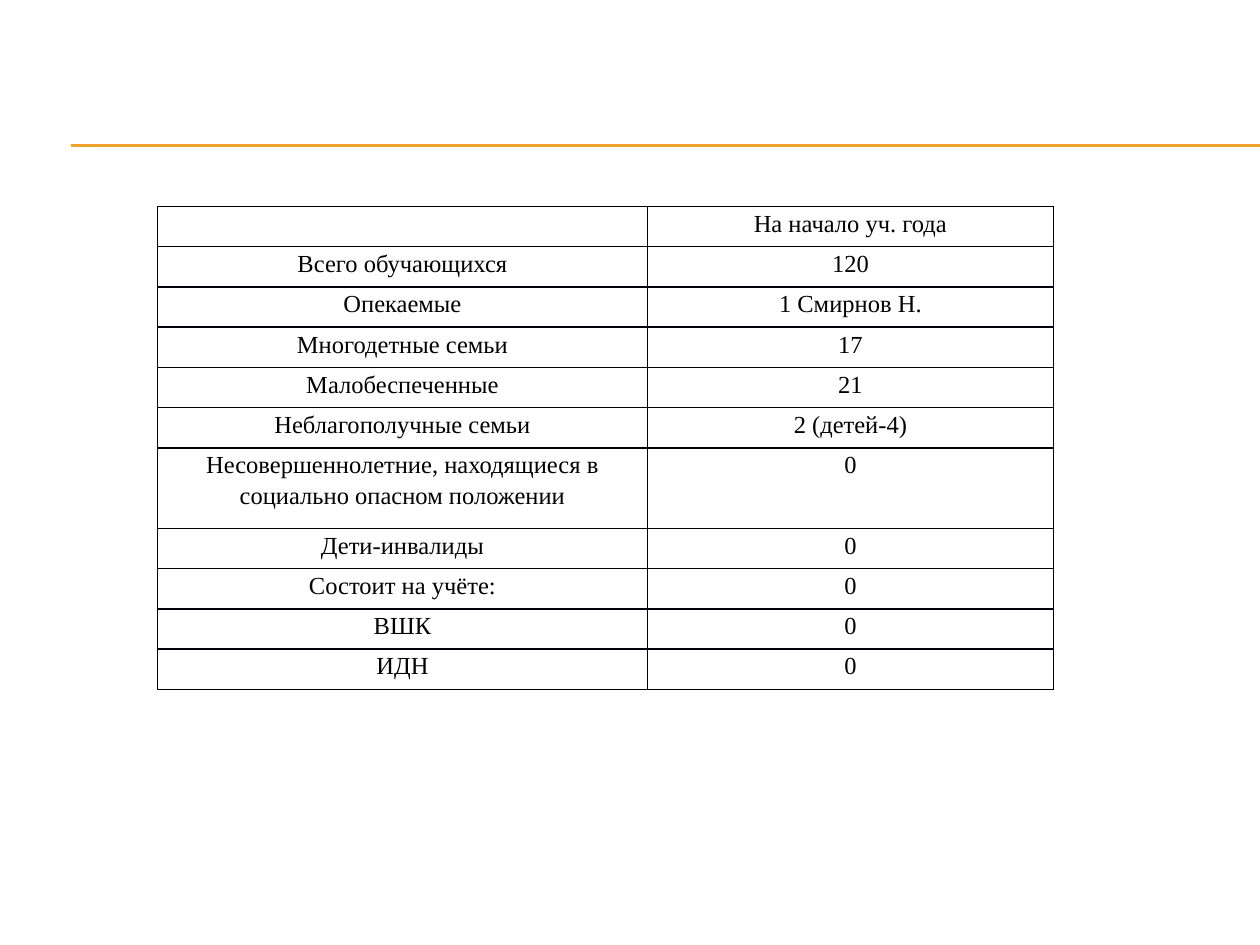
from pptx import Presentation
from pptx.dml.color import RGBColor
from pptx.enum.shapes import MSO_CONNECTOR
from pptx.enum.text import MSO_ANCHOR, PP_ALIGN
from pptx.oxml.ns import qn
from pptx.util import Pt
from lxml.etree import SubElement

ORANGE = RGBColor(0xF0, 0xA2, 0x2E)
WHITE = RGBColor(0xFF, 0xFF, 0xFF)
BLACK = RGBColor(0x00, 0x00, 0x00)
BORDER = RGBColor(0x00, 0x00, 0x0A)

CELL_FORMAT = {
    "margin_left": Pt(5.4), "margin_right": Pt(5.4),
    "margin_top": Pt(0), "margin_bottom": Pt(0),
    "vertical_anchor": MSO_ANCHOR.TOP,
}
PARAGRAPH_FORMAT = {"alignment": PP_ALIGN.CENTER, "line_spacing": 1.15}
FONT_FORMAT = {"name": "Times New Roman", "size": Pt(14), "bold": False}

COLUMN_WIDTHS = (280, 232)
ROW_HEIGHT = 23
ROWS = (
    ("", "На начало уч. года"),
    ("Всего обучающихся", "120"),
    ("Опекаемые", "1 Смирнов Н."),
    ("Многодетные семьи", "17"),
    ("Малобеспеченные", "21"),
    ("Неблагополучные семьи", "2 (детей-4)"),
    ("Несовершеннолетние, находящиеся в социально опасном положении", "0"),
    ("Дети-инвалиды", "0"),
    ("Состоит на учёте:", "0"),
    ("ВШК", "0"),
    ("ИДН", "0"),
)
TALL_ROW = 6


def apply_format(target, values):
    for name, value in values.items():
        setattr(target, name, value)


def add_rules(slide, left, top, width, gap):
    """Draw the pair of thin header rules."""
    for y in (top, top + gap):
        rule = slide.shapes.add_connector(
            MSO_CONNECTOR.STRAIGHT, Pt(left), Pt(y), Pt(left + width), Pt(y))
        rule.line.color.rgb = ORANGE
        rule.line.width = Pt(0.75)
        SubElement(rule._element.spPr, qn("a:effectLst"))


def add_borders(cell):
    properties = cell._tc.get_or_add_tcPr()
    for position, side in enumerate(("a:lnL", "a:lnR", "a:lnT", "a:lnB")):
        line = SubElement(properties, qn(side), w=str(Pt(1)))
        fill = SubElement(line, qn("a:solidFill"))
        SubElement(fill, qn("a:srgbClr"), val=str(BORDER))
        # Borders come before the cell fill
        properties.insert(position, line)


def fill_cell(cell, text):
    apply_format(cell, CELL_FORMAT)
    cell.fill.solid()
    cell.fill.fore_color.rgb = WHITE
    add_borders(cell)
    paragraph = cell.text_frame.paragraphs[0]
    apply_format(paragraph, PARAGRAPH_FORMAT)
    if text:
        run = paragraph.add_run()
        run.text = text
        apply_format(run.font, FONT_FORMAT)
        run.font.color.rgb = BLACK


def add_family_table(slide, left, top):
    """Place the table of pupil and family counts."""
    height = ROW_HEIGHT * (len(ROWS) + 1)
    table = slide.shapes.add_table(
        len(ROWS), len(COLUMN_WIDTHS), Pt(left), Pt(top),
        Pt(sum(COLUMN_WIDTHS)), Pt(height)).table
    for column, width in zip(table.columns, COLUMN_WIDTHS):
        column.width = Pt(width)
    for index, texts in enumerate(ROWS):
        row = table.rows[index]
        row.height = Pt(ROW_HEIGHT * (2 if index == TALL_ROW else 1))
        for cell, text in zip(row.cells, texts):
            fill_cell(cell, text)


def main():
    presentation = Presentation()
    presentation.slide_width, presentation.slide_height = Pt(720), Pt(540)
    slide = presentation.slides.add_slide(presentation.slide_layouts[6])
    slide.background.fill.solid()
    slide.background.fill.fore_color.rgb = WHITE
    add_rules(slide, left=40.5, top=82.8, width=679.5, gap=0.6)
    add_family_table(slide, left=90, top=118)
    presentation.save("out.pptx")


if __name__ == "__main__":
    main()
